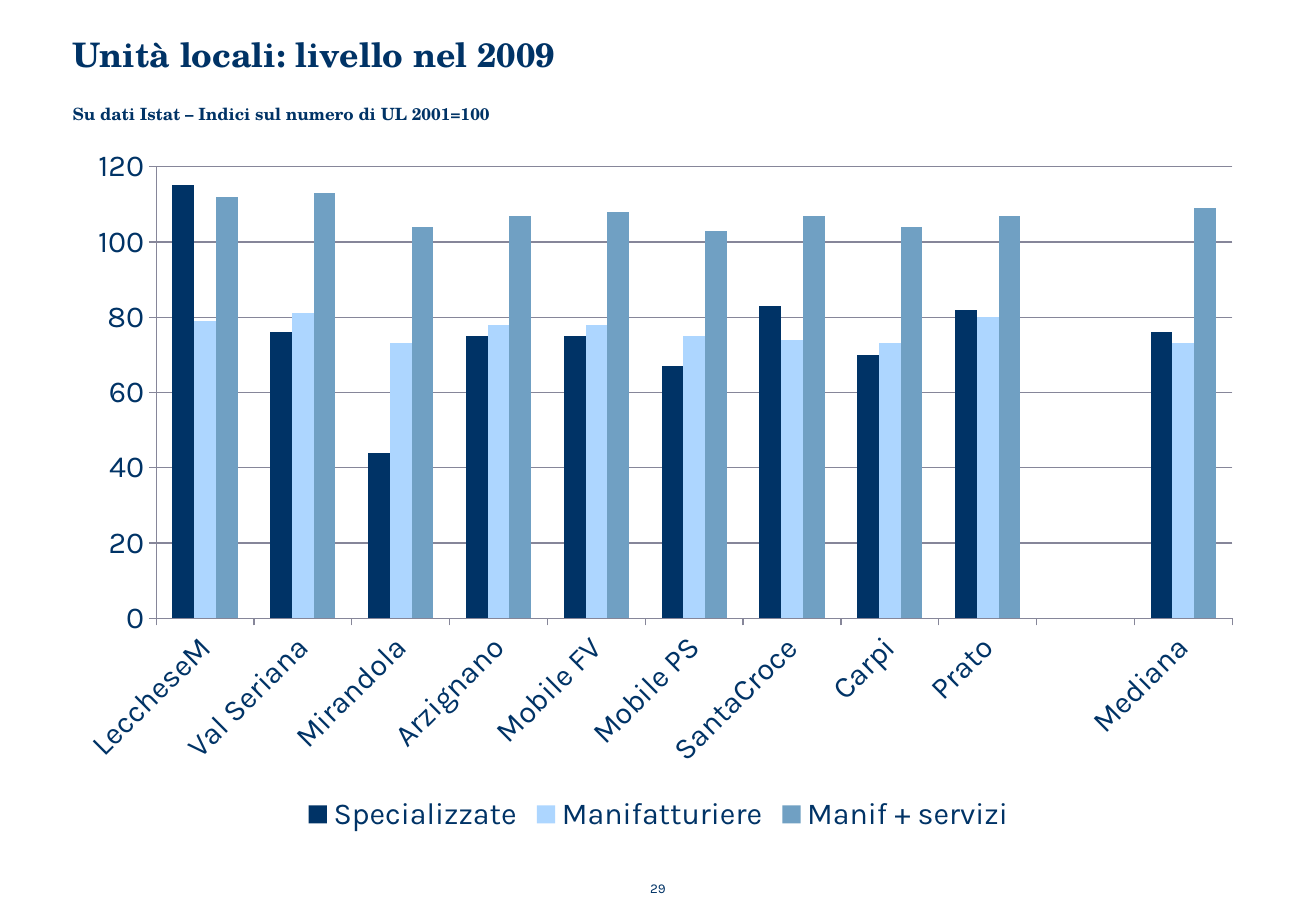
"""Build the slide on local units in 2009, indexed to 2001."""
from dataclasses import dataclass
from typing import Optional

from lxml import etree
from pptx import Presentation
from pptx.chart.chart import Chart
from pptx.chart.data import CategoryChartData
from pptx.dml.color import RGBColor
from pptx.enum.chart import XL_CHART_TYPE, XL_LEGEND_POSITION, XL_TICK_MARK
from pptx.enum.text import MSO_ANCHOR, MSO_AUTO_SIZE, PP_ALIGN
from pptx.oxml.ns import qn
from pptx.shapes.base import BaseShape
from pptx.text.text import Font
from pptx.util import Cm, Pt

CLUSTERED = XL_CHART_TYPE.COLUMN_CLUSTERED
LEGEND_BOTTOM = XL_LEGEND_POSITION.BOTTOM
TICK_OUTSIDE, TICK_NONE = XL_TICK_MARK.OUTSIDE, XL_TICK_MARK.NONE
TOP, MIDDLE = MSO_ANCHOR.TOP, MSO_ANCHOR.MIDDLE
NO_FIT = MSO_AUTO_SIZE.NONE
LEFT = PP_ALIGN.LEFT


@dataclass(frozen=True)
class Theme:
    navy: str = "003366"
    sky: str = "ADD6FF"
    steel: str = "70A0C3"
    grid: str = "868699"
    serif: str = "TeX Gyre Schola"
    sans: str = "Karla"
    title_size: float = 20
    subtitle_size: float = 10
    chart_size: float = 18
    number_size: float = 8


@dataclass(frozen=True)
class Box:
    left: float
    top: float
    width: float
    height: float

    def lengths(self) -> tuple[Cm, Cm, Cm, Cm]:
        return Cm(self.left), Cm(self.top), Cm(self.width), Cm(self.height)


@dataclass(frozen=True)
class IndexSeries:
    name: str
    color: str
    values: tuple[Optional[int], ...]


THEME = Theme()
TITLE_BOX = Box(1.27, 0.58, 24.99, 1.32)
SUBTITLE_BOX = Box(1.27, 1.98, 24.99, 0.79)
CHART_BOX = Box(1.27, 2.82, 24.99, 14.71)
NUMBER_BOX = Box(13.31, 18.16, 0.94, 0.86)

DISTRICTS = ("LeccheseM", "Val Seriana", "Mirandola", "Arzignano", "Mobile FV",
             "Mobile PS", "SantaCroce", "Carpi", "Prato", " ", "Mediana")
INDICES = (
    IndexSeries("Specializzate", THEME.navy,
                (115, 76, 44, 75, 75, 67, 83, 70, 82, None, 76)),
    IndexSeries("Manifatturiere", THEME.sky,
                (79, 81, 73, 78, 78, 75, 74, 73, 80, None, 73)),
    IndexSeries("Manif + servizi", THEME.steel,
                (112, 113, 104, 107, 108, 103, 107, 104, 107, None, 109)),
)


def style_font(font: Font, size: float, family: str, bold: bool = False) -> None:
    font.size, font.name, font.bold = Pt(size), family, bold
    font.color.rgb = RGBColor.from_string(THEME.navy)


def write_text(holder: BaseShape, text: str, *, box: Box, size: float,
               family: str, insets: tuple[float, float, float, float],
               bold: bool = False, anchor: MSO_ANCHOR = TOP,
               wrap: bool = True) -> None:
    holder.left, holder.top, holder.width, holder.height = box.lengths()
    frame = holder.text_frame
    frame.auto_size, frame.word_wrap = NO_FIT, wrap
    frame.vertical_anchor = anchor
    (frame.margin_left, frame.margin_top,
     frame.margin_right, frame.margin_bottom) = map(Cm, insets)
    paragraph = frame.paragraphs[0]
    paragraph.alignment = LEFT
    paragraph.space_before = Pt(0)
    properties = paragraph._p.get_or_add_pPr()
    properties.set("marL", "0")
    properties.set("indent", "0")
    etree.SubElement(properties, qn("a:buNone"))
    run = paragraph.add_run()
    run.text = text
    style_font(run.font, size, family, bold)


def style_axes(chart: Chart) -> None:
    districts, index = chart.category_axis, chart.value_axis
    index.minimum_scale, index.maximum_scale, index.major_unit = 0, 120, 20
    index.has_major_gridlines = True
    for axis in (districts, index):
        axis.major_tick_mark, axis.minor_tick_mark = TICK_OUTSIDE, TICK_NONE
        style_font(axis.tick_labels.font, THEME.chart_size, THEME.sans)
    for line in (districts.format.line, index.format.line,
                 index.major_gridlines.format.line):
        line.color.rgb = RGBColor.from_string(THEME.grid)
        line.width = Pt(0.75)
    label_body = chart.element.xpath(".//c:catAx/c:txPr/a:bodyPr")[0]
    label_body.set("rot", "-2700000")
    label_body.set("vert", "horz")


def style_chart(chart: Chart) -> None:
    style_font(chart.font, THEME.chart_size, THEME.sans)
    chart.has_title = False
    chart.has_legend = True
    chart.legend.position = LEGEND_BOTTOM
    chart.legend.include_in_layout = False
    style_font(chart.legend.font, THEME.chart_size, THEME.sans)
    plot = chart.plots[0]
    plot.gap_width, plot.overlap, plot.vary_by_categories = 150, 0, False
    for columns, index in zip(plot.series, INDICES):
        columns.format.fill.solid()
        columns.format.fill.fore_color.rgb = RGBColor.from_string(index.color)
        columns.invert_if_negative = False
    style_axes(chart)


def main() -> None:
    presentation = Presentation()
    presentation.slide_width, presentation.slide_height = Cm(27.51), Cm(19.05)
    slide = presentation.slides.add_slide(presentation.slide_layouts[1])

    number = slide.shapes.add_textbox(*NUMBER_BOX.lengths())
    write_text(number, "29", box=NUMBER_BOX, size=THEME.number_size,
               family=THEME.sans, insets=(0.28, 0.25, 0.28, 0.25), wrap=False)
    write_text(slide.shapes.title, "Unità locali: livello nel 2009",
               box=TITLE_BOX, size=THEME.title_size, family=THEME.serif,
               insets=(0.25, 0.13, 0.51, 0.13), bold=True)
    write_text(slide.placeholders[1],
               "Su dati Istat – Indici sul numero di UL 2001=100",
               box=SUBTITLE_BOX, size=THEME.subtitle_size, family=THEME.serif,
               insets=(0.25, 0.23, 0.25, 0.23), bold=True, anchor=MIDDLE)

    data = CategoryChartData()
    data.categories = DISTRICTS
    for index in INDICES:
        data.add_series(index.name, index.values)
    style_chart(slide.shapes.add_chart(CLUSTERED, *CHART_BOX.lengths(), data).chart)

    presentation.save("out.pptx")


if __name__ == "__main__":
    main()
